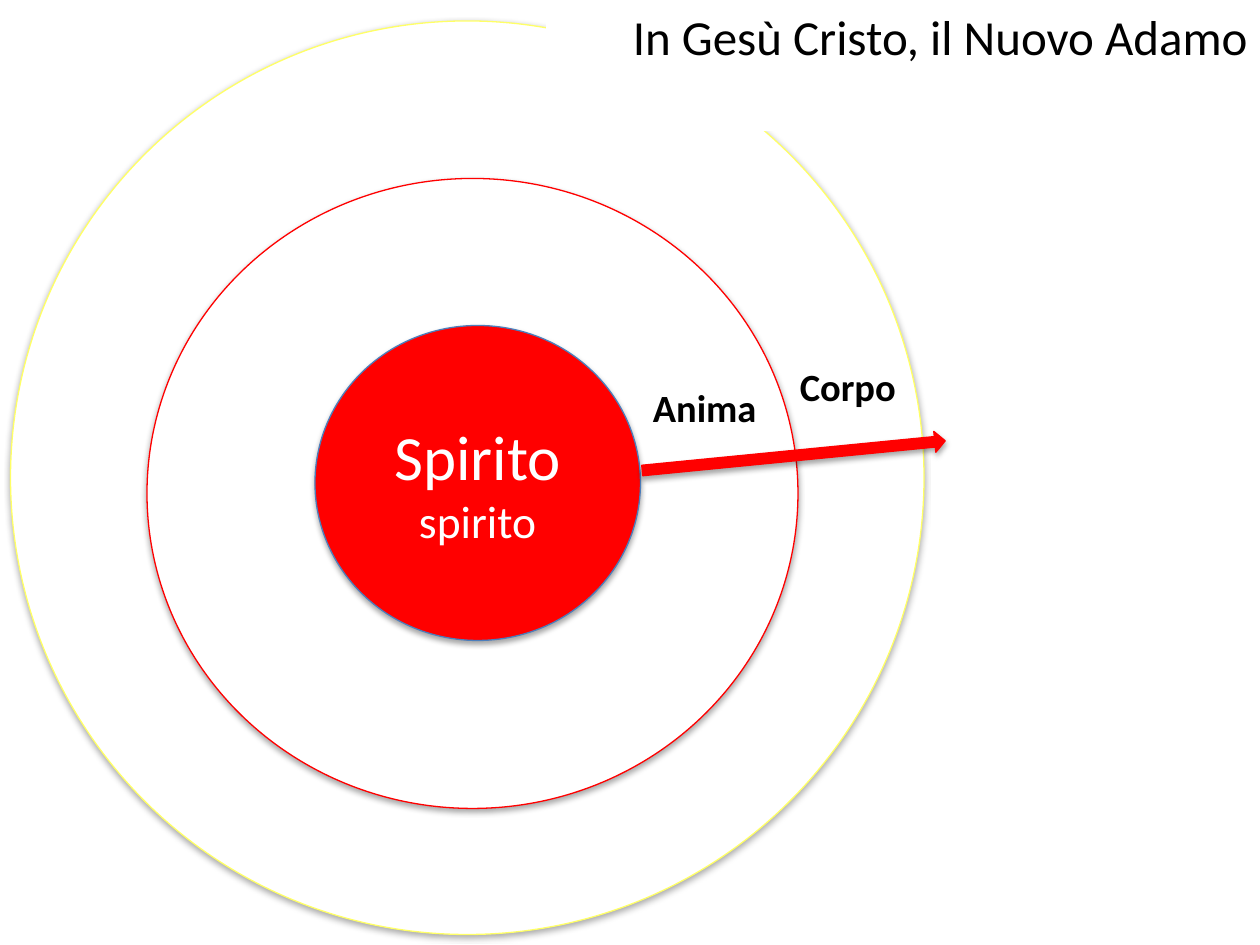
from dataclasses import dataclass

from lxml import etree
from pptx import Presentation
from pptx.dml.color import RGBColor
from pptx.enum.shapes import MSO_SHAPE
from pptx.enum.text import MSO_ANCHOR, MSO_AUTO_SIZE, PP_ALIGN
from pptx.oxml.ns import qn
from pptx.util import Pt

EMU_PER_PX = 7620  # 120 px to the inch
FONT = "Calibri"
BLACK, WHITE, RED, YELLOW, BLUE = "000000", "FFFFFF", "FF0000", "FFFF66", "4B7EBC"
OVAL, RIGHT_ARROW = MSO_SHAPE.OVAL, MSO_SHAPE.RIGHT_ARROW
TOP, MIDDLE = MSO_ANCHOR.TOP, MSO_ANCHOR.MIDDLE
LEFT, CENTER, RIGHT = PP_ALIGN.LEFT, PP_ALIGN.CENTER, PP_ALIGN.RIGHT
NO_AUTOFIT = MSO_AUTO_SIZE.NONE


@dataclass(frozen=True)
class Box:
    left: int
    top: int
    width: int
    height: int

    def emu(self) -> list[int]:
        return [px(n) for n in (self.left, self.top, self.width, self.height)]


@dataclass(frozen=True)
class Figure:
    box: Box
    fill: str
    line: str
    preset: MSO_SHAPE = OVAL
    rotation: float = 0


@dataclass(frozen=True)
class Label:
    text: str
    box: Box


BODY = Figure(Box(10, 20, 870, 870), WHITE, YELLOW)
SOUL = Figure(Box(140, 170, 620, 600), WHITE, RED)
SPIRIT = Figure(Box(300, 310, 310, 300), RED, BLUE)
OUTWARD_ARROW = Figure(Box(611, 424, 290, 20), RED, RED, RIGHT_ARROW, 354.4)
LABELS = (
    Label("Anima", Box(610, 360, 150, 59)),
    Label("Corpo", Box(750, 340, 150, 59)),
)
TITLE = Label("In Gesù Cristo, il Nuovo Adamo", Box(520, 0, 680, 125))


def px(count: int) -> int:
    return count * EMU_PER_PX


def rgb(code: str) -> RGBColor:
    return RGBColor.from_string(code)


def add_soft_shadow(shape) -> None:
    shape.shadow.inherit = False
    effects = shape._element.spPr.find(qn("a:effectLst"))
    shadow = etree.SubElement(effects, qn("a:outerShdw"), blurRad="40000",
                              dist="23000", dir="5400000", rotWithShape="0")
    color = etree.SubElement(shadow, qn("a:srgbClr"), val=BLACK)
    etree.SubElement(color, qn("a:alpha"), val="35000")


def add_figure(slide, figure: Figure):
    shape = slide.shapes.add_shape(figure.preset, *figure.box.emu())
    shape.rotation = figure.rotation
    shape.fill.solid()
    shape.fill.fore_color.rgb = rgb(figure.fill)
    shape.line.color.rgb = rgb(figure.line)
    shape.line.width = Pt(0.75)
    add_soft_shadow(shape)
    return shape


def format_paragraph(paragraph, size: int, color: str, align: PP_ALIGN,
                     bold: bool = False) -> None:
    paragraph.alignment = align
    font = paragraph.font
    font.name, font.size, font.bold = FONT, Pt(size), bold
    font.color.rgb = rgb(color)


def add_spirit(slide) -> None:
    frame = add_figure(slide, SPIRIT).text_frame
    frame.vertical_anchor = MIDDLE
    frame.text = "Spirito\nspirito"
    for paragraph, size in zip(frame.paragraphs, (36, 26)):
        format_paragraph(paragraph, size, WHITE, CENTER)


def add_label(slide, label: Label) -> None:
    frame = slide.shapes.add_textbox(*label.box.emu()).text_frame
    frame.word_wrap = True
    frame.text = label.text
    format_paragraph(frame.paragraphs[0], 22, BLACK, LEFT, bold=True)


def place_title(slide) -> None:
    """Put the title in front, so that its white box hides part of the outer circle."""
    title = slide.shapes.title
    title.left, title.top, title.width, title.height = TITLE.box.emu()
    title.fill.solid()
    title.fill.fore_color.rgb = rgb(WHITE)
    frame = title.text_frame
    frame.text = TITLE.text
    frame.word_wrap = True
    frame.auto_size = NO_AUTOFIT
    frame.vertical_anchor = TOP
    format_paragraph(frame.paragraphs[0], 28, BLACK, RIGHT)
    slide.shapes._spTree.append(title._element)


def main() -> None:
    deck = Presentation()
    deck.slide_width, deck.slide_height = px(1200), px(900)
    slide = deck.slides.add_slide(deck.slide_layouts[5])
    add_figure(slide, BODY)
    add_figure(slide, SOUL)
    add_spirit(slide)
    for label in LABELS:
        add_label(slide, label)
    add_figure(slide, OUTWARD_ARROW)
    place_title(slide)
    deck.save("out.pptx")


if __name__ == "__main__":
    main()
